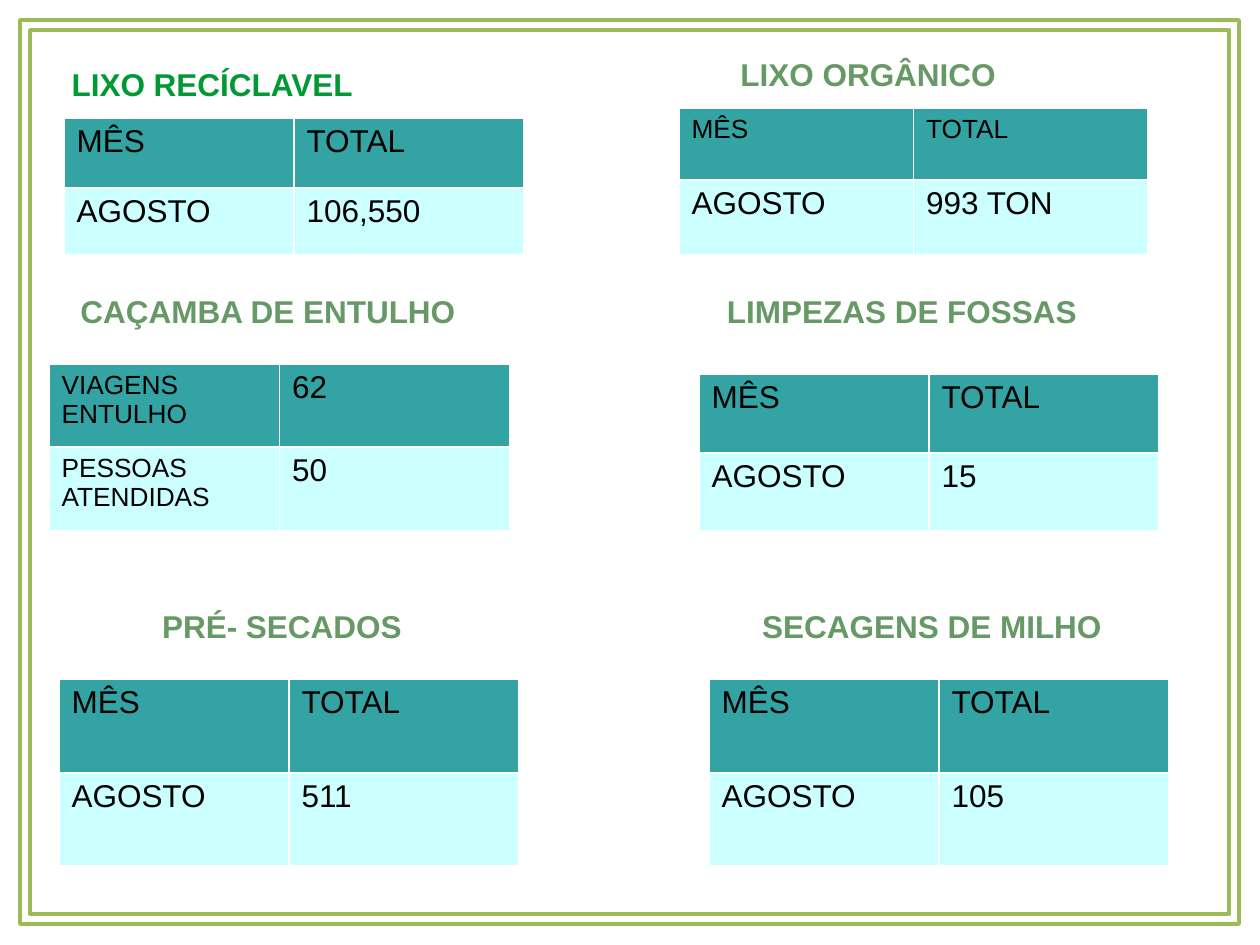
from lxml import etree
from pptx import Presentation
from pptx import util as u
from pptx.dml.color import RGBColor
from pptx.enum import text
from pptx.oxml.ns import qn

SCALE = 914400 / 126
WHITE = RGBColor(0xFF, 0xFF, 0xFF)
BLACK = RGBColor(0, 0, 0)
LIME = RGBColor(0x9B, 0xBA, 0x58)
GREEN = RGBColor(0x00, 0x99, 0x33)
SAGE = RGBColor(0x66, 0x99, 0x66)
TEAL = RGBColor(0x33, 0xA3, 0xA3)
AQUA = RGBColor(0xCC, 0xFF, 0xFF)
LEFT, CENTER = text.PP_ALIGN.LEFT, text.PP_ALIGN.CENTER


def px(length):
    return u.Emu(round(length * SCALE))


def write(frame, words, *, size=18, color=BLACK, bold=False, align=LEFT, font="Arial"):
    para = frame.paragraphs[0]
    para.alignment = align
    span = para.add_run()
    span.text = words
    span.font.name = font
    span.font.size = u.Pt(size)
    span.font.bold = bold
    span.font.color.rgb = color


class Report:
    heading_height = 47
    border_width = u.Pt(0.75)

    def __init__(self, page):
        self.page = page

    def frame(self, *rectangles):
        (left, top, right, bottom), *inner = rectangles
        builder = self.page.shapes.build_freeform(left, bottom, scale=SCALE)
        builder.add_line_segments([(right, bottom), (right, top), (left, top)])
        for left, top, right, bottom in inner:
            builder.move_to(left, bottom)
            builder.add_line_segments([(right, bottom), (right, top), (left, top)])
        outline = builder.convert_to_shape()
        outline.shadow.inherit = False
        outline.fill.background()
        outline.line.color.rgb = LIME
        outline.line.width = u.Pt(2)

    def place(self, box, words, left, top, width, **style):
        box.left, box.top = px(left), px(top)
        box.width, box.height = px(width), px(self.heading_height)
        frame = box.text_frame
        frame.word_wrap = True
        frame.auto_size = text.MSO_AUTO_SIZE.NONE
        frame.vertical_anchor = text.MSO_ANCHOR.TOP
        write(frame, words, bold=True, **style)

    def title(self, words, left, top, width, **style):
        self.place(self.page.shapes.title, words, left, top, width, **style)

    def heading(self, words, left, top, width, align=CENTER):
        box = self.page.shapes.add_textbox(0, 0, 0, 0)
        self.place(box, words, left, top, width, color=SAGE, align=align)

    def border(self, cell):
        properties = cell._tc.get_or_add_tcPr()
        for index, side in enumerate(("lnL", "lnR", "lnT", "lnB")):
            line = etree.Element(qn(f"a:{side}"), w=str(self.border_width))
            fill = etree.SubElement(line, qn("a:solidFill"))
            etree.SubElement(fill, qn("a:srgbClr"), val=str(WHITE))
            properties.insert(index, line)

    def table(self, rows, left, top, width, heights, small=()):
        table = self.page.shapes.add_table(
            len(rows), 2, px(left), px(top), px(width), px(sum(heights))
        ).table
        table.first_row = table.horz_banding = False
        for column in table.columns:
            column.width = px(width / 2)
        for r, (values, height, color) in enumerate(zip(rows, heights, (TEAL, AQUA))):
            table.rows[r].height = px(height)
            for c, words in enumerate(values):
                cell = table.cell(r, c)
                cell.fill.solid()
                cell.fill.fore_color.rgb = color
                self.border(cell)
                write(cell.text_frame, words, size=15 if (r, c) in small else 18)


def monthly(total):
    return ("MÊS", "TOTAL"), ("AGOSTO", total)


def main():
    deck = Presentation()
    deck.slide_width, deck.slide_height = u.Inches(10), u.Inches(7.5)
    report = Report(deck.slides.add_slide(deck.slide_layouts[5]))

    report.frame((20, 20, 1239, 924), (30, 30, 1229, 914))

    report.title("LIXO RECÍCLAVEL", 59, 59, 357, color=GREEN)
    report.table(monthly("106,550"), 64, 118, 460, (70, 67))

    report.heading("LIXO ORGÂNICO", 728, 49, 485, align=LEFT)
    report.table(monthly("993 TON"), 679, 108, 469, (72, 75), small={(0, 0), (0, 1)})

    report.heading("CAÇAMBA DE ENTULHO", -59, 286, 654)
    waste = ("VIAGENS ENTULHO", "62"), ("PESSOAS ATENDIDAS", "50")
    report.table(waste, 49, 364, 461, (83, 84), small={(0, 0), (1, 0)})

    report.heading("LIMPEZAS DE FOSSAS", 669, 286, 466)
    report.table(monthly("15"), 699, 374, 460, (79, 78))

    for words, total, heading_left, table_left in (
        ("PRÉ- SECADOS", "511", 49, 59),
        ("SECAGENS DE MILHO", "105", 699, 709),
    ):
        report.heading(words, heading_left, 601, 466)
        report.table(monthly(total), table_left, 679, 460, (94, 93))

    deck.save("out.pptx")


if __name__ == "__main__":
    main()
